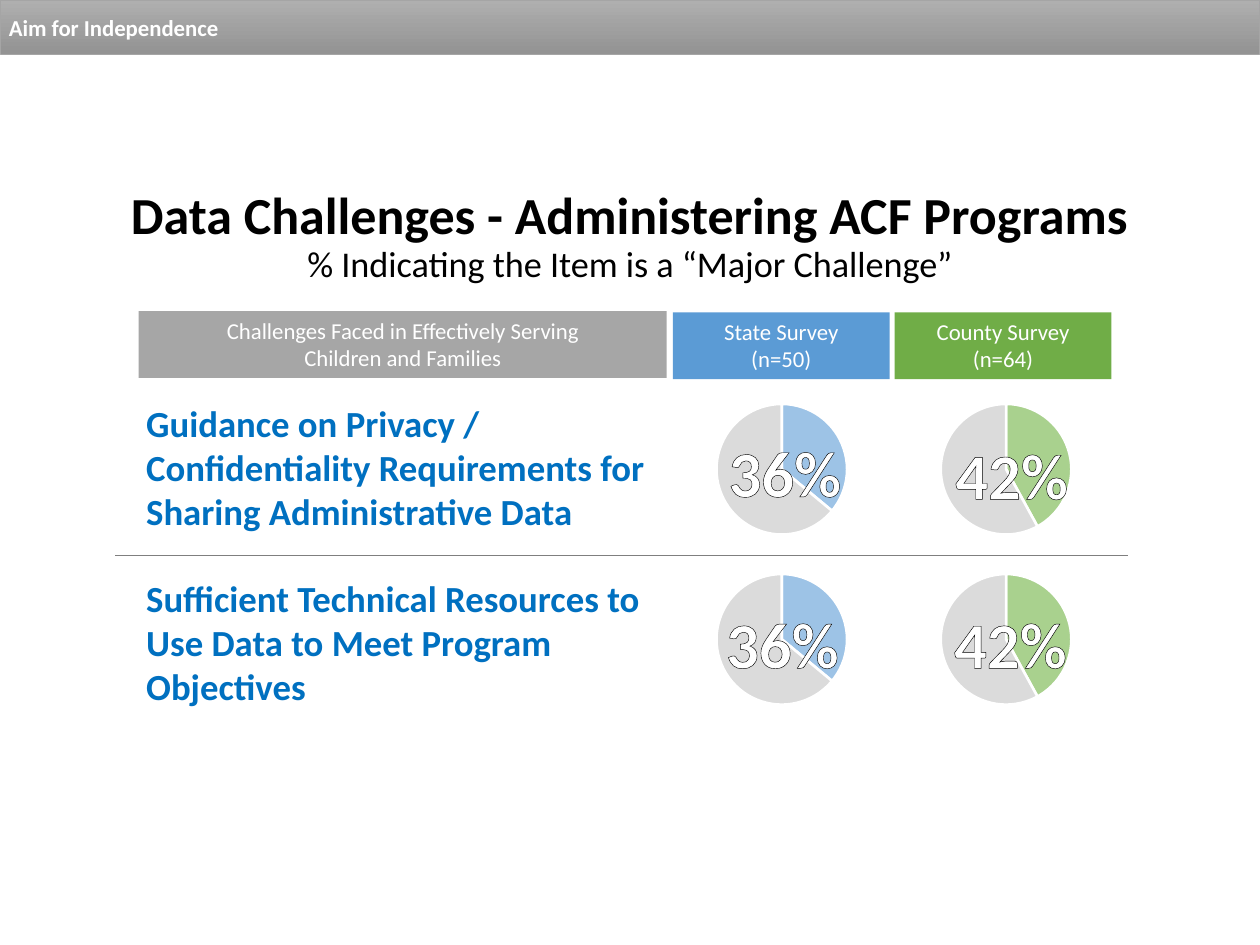
from lxml import etree
from pptx import Presentation
from pptx.chart.data import CategoryChartData
from pptx.dml.color import RGBColor
from pptx.enum.chart import XL_CHART_TYPE
from pptx.enum.shapes import MSO_CONNECTOR, MSO_SHAPE
from pptx.enum.text import MSO_ANCHOR, PP_ALIGN
from pptx.oxml import parse_xml
from pptx.oxml.ns import qn
from pptx.util import Inches, Pt

PIE, RECT, STRAIGHT = XL_CHART_TYPE.PIE, MSO_SHAPE.RECTANGLE, MSO_CONNECTOR.STRAIGHT
LEFT, CENTER = PP_ALIGN.LEFT, PP_ALIGN.CENTER
TOP, MIDDLE = MSO_ANCHOR.TOP, MSO_ANCHOR.MIDDLE
FONT = "Calibri"
COLORS = {
    "white": "FFFFFF", "black": "000000", "topic": "0070C0", "rest": "DBDBDB",
    "banner_top": "AFAFAF", "banner_bottom": "939393", "banner_edge": "A5A5A5",
    "heading": "A6A6A6", "state": "5B9BD5", "county": "70AD47",
    "state_pie": "9DC3E6", "county_pie": "A9D18E", "divider": "7F7F7F",
}
COLORS = {name: RGBColor.from_string(value) for name, value in COLORS.items()}

deck = Presentation()
deck.slide_width, deck.slide_height = Inches(10), Inches(7.5)
slide = deck.slides.add_slide(deck.slide_layouts[6])
shapes = slide.shapes


def write(holder, text, size, color, bold=False, align=CENTER, anchor=TOP, side=0.09):
    frame = holder.text_frame
    frame.text = text
    frame.word_wrap = True
    frame.vertical_anchor = anchor
    frame.margin_left = frame.margin_right = Inches(side)
    frame.margin_top = frame.margin_bottom = Inches(0.04)
    for paragraph in frame.paragraphs:
        paragraph.alignment = align
        for run in paragraph.runs:
            run.font.name, run.font.size, run.font.bold = FONT, Pt(size), bold
            run.font.color.rgb = COLORS[color]
    return frame


def add_box(left, top, width, height):
    box = shapes.add_shape(RECT, Inches(left), Inches(top), Inches(width), Inches(height))
    box.shadow.inherit = False
    box.line.fill.background()
    return box


banner = add_box(0, 0, 10, 0.43)
banner.fill.gradient()
banner.fill.gradient_angle = 270
for stop, shade in zip(banner.fill.gradient_stops, ("banner_top", "banner_bottom")):
    stop.color.rgb = COLORS[shade]
banner.line.color.rgb = COLORS["banner_edge"]
banner.line.width = Pt(0.5)
write(banner, "Aim for Independence", 13, "white", True, LEFT, MIDDLE, 0.07)

title = shapes.add_textbox(0, Inches(1.45), deck.slide_width, Inches(0.87))
heading = write(
    title,
    "Data Challenges - Administering ACF Programs\v% Indicating the Item is a “Major Challenge”",
    29.7, "black", True, anchor=MIDDLE,
).paragraphs[0]
heading.line_spacing = 0.9
heading.runs[1].font.size, heading.runs[1].font.bold = Pt(20.7), False

column_heads = [
    (1.1, 2.47, 4.19, "heading", "Challenges Faced in Effectively Serving\nChildren and Families"),
    (5.34, 2.48, 1.72, "state", "State Survey\n(n=50)"),
    (7.1, 2.48, 1.72, "county", "County Survey\n(n=64)"),
]
for left, top, width, color, label in column_heads:
    head = add_box(left, top, width, 0.53)
    head.fill.solid()
    head.fill.fore_color.rgb = COLORS[color]
    write(head, label, 13, "white")

topics = [
    (3.05, 3.14, "Guidance on Privacy / Confidentiality Requirements for Sharing Administrative Data"),
    (4.4, 4.53, "Sufficient Technical Resources to Use Data to Meet Program Objectives"),
]
surveys = [
    (5.54, 36, "state_pie", [(5.58, 3.39), (5.56, 4.75)]),
    (7.32, 42, "county_pie", [(7.38, 3.41), (7.37, 4.75)]),
]
PIE_LAYOUT = (
    '<c:layout xmlns:c="http://schemas.openxmlformats.org/drawingml/2006/chart"><c:manualLayout>'
    '<c:layoutTarget val="inner"/><c:xMode val="edge"/><c:yMode val="edge"/>'
    '<c:x val="0.11"/><c:y val="0.11"/><c:w val="0.78"/><c:h val="0.78"/>'
    '</c:manualLayout></c:layout>'
)
for row, (pie_top, topic_top, topic) in enumerate(topics):
    topic_box = shapes.add_textbox(Inches(1.07), Inches(topic_top), Inches(4.19), Inches(1.15))
    write(topic_box, topic, 21, "topic", True, LEFT)

    for pie_left, share, color, label_places in surveys:
        data = CategoryChartData()
        data.categories = ["1", "2"]
        data.add_series("Series 1", (share, 100 - share))
        chart = shapes.add_chart(
            PIE, Inches(pie_left), Inches(pie_top), Inches(1.33), Inches(1.35), data
        ).chart
        chart.has_legend = chart.has_title = False
        chart.font.name, chart.font.size = FONT, Pt(10)
        chart.font.color.rgb = COLORS["black"]
        plot = chart.plots[0]
        plot.vary_by_categories = True
        for index, slice_color in enumerate((color, "rest")):
            wedge = plot.series[0].points[index].format
            wedge.fill.solid()
            wedge.fill.fore_color.rgb = COLORS[slice_color]
            wedge.line.color.rgb = COLORS["white"]
            wedge.line.width = Pt(1.5)
        plot_area = chart.element.find(".//" + qn("c:plotArea"))
        for automatic in plot_area.findall(qn("c:layout")):
            plot_area.remove(automatic)
        plot_area.insert(0, parse_xml(PIE_LAYOUT))

        left, top = label_places[row]
        percent = shapes.add_textbox(Inches(left), Inches(top), Inches(1.3), Inches(0.71))
        run = write(percent, f"{share}%", 37, "white", True).paragraphs[0].runs[0]
        outline = etree.Element(qn("a:ln"), w=str(Pt(1)))
        ink = etree.SubElement(outline, qn("a:solidFill"))
        etree.SubElement(ink, qn("a:srgbClr"), val=str(COLORS["black"]))
        run.font._element.insert(0, outline)

divider = shapes.add_connector(STRAIGHT, Inches(8.95), Inches(4.41), Inches(0.91), Inches(4.41))
divider.line.color.rgb = COLORS["divider"]
divider.line.width = Pt(0.5)
etree.SubElement(divider._element.spPr, qn("a:effectLst"))

deck.save("out.pptx")
